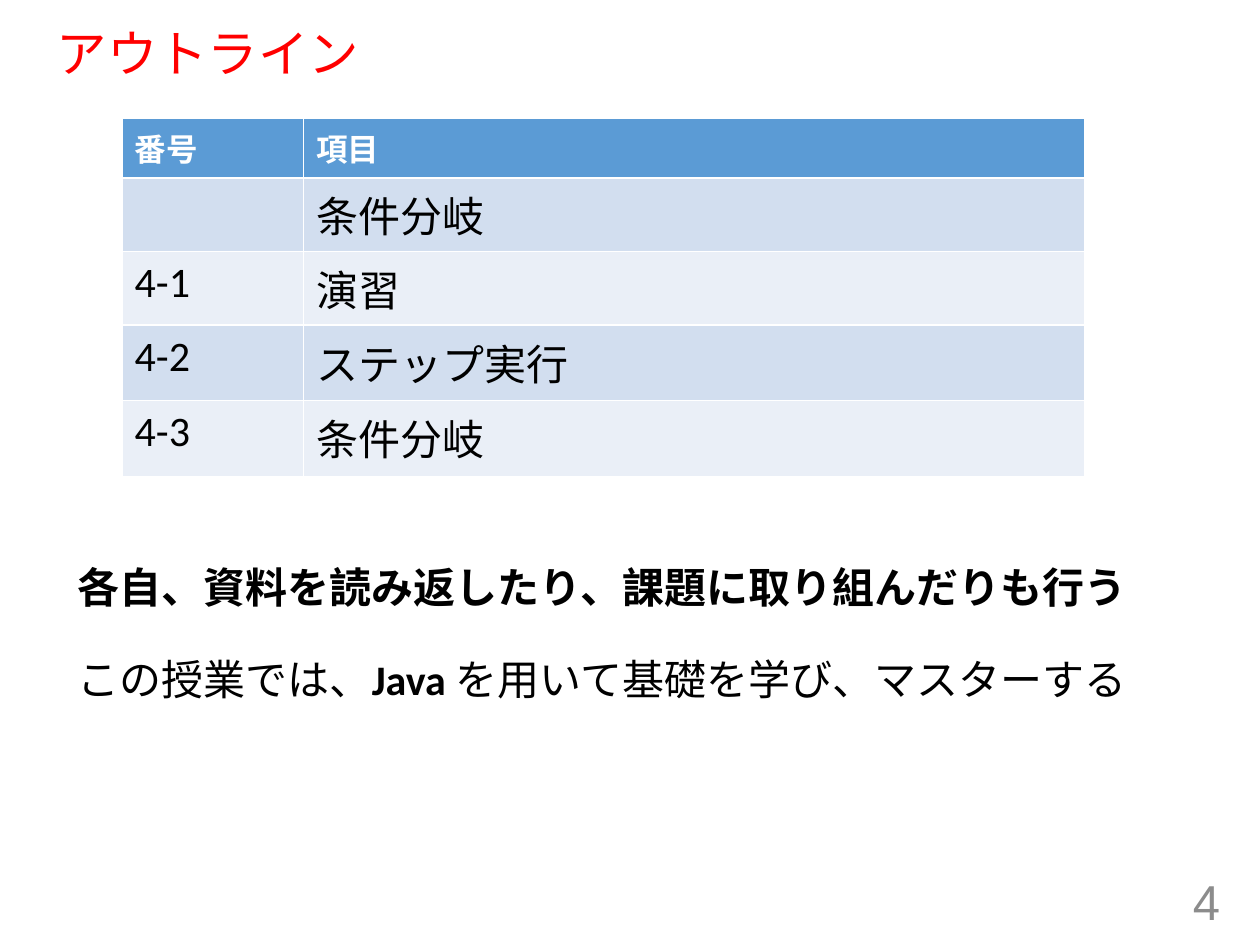
"""Build the outline slide: a table of topics and two remarks on the course."""
import pptx
import pptx.util
import pptx.dml.color
import pptx.enum.text

Pt = pptx.util.Pt
Align = pptx.enum.text.PP_ALIGN
Anchor = pptx.enum.text.MSO_ANCHOR
Fit = pptx.enum.text.MSO_AUTO_SIZE


def paint(code):
    """Turn a hex string into a colour."""
    return pptx.dml.color.RGBColor.from_string(code)


def style(para, size, color, face="Calibri", bold=False):
    """Set the font of a whole paragraph."""
    font = para.font
    font.size, font.name, font.bold = Pt(size), face, bold
    font.color.rgb = paint(color)


deck = pptx.Presentation()
deck.slide_width, deck.slide_height = Pt(720), Pt(540)
slide = deck.slides.add_slide(deck.slide_layouts[5])

title = slide.shapes.title
title.left, title.top, title.width, title.height = Pt(25.2), Pt(13.7), Pt(666), Pt(36.7)
frame = title.text_frame
frame.text = "アウトライン"
frame.auto_size = Fit.NONE
frame.vertical_anchor = Anchor.MIDDLE
para = frame.paragraphs[0]
para.alignment = Align.LEFT
para.line_spacing = 0.9
style(para, 28.8, "FF0000", "Arial")

rows = [
    ("番号", "項目"),
    ("", "条件分岐"),
    ("4-1", "演習"),
    ("4-2", "ステップ実行"),
    ("4-3", "条件分岐"),
]
highs = [34, 34, 34, 43.2, 43.2]
table = slide.shapes.add_table(
    len(rows), 2, Pt(69.8), Pt(67.7), Pt(550), Pt(sum(highs))
).table
for column, width in zip(table.columns, [103.7, 446.3]):
    column.width = Pt(width)
for i, (row, high) in enumerate(zip(rows, highs)):
    table.rows[i].height = Pt(high)
    head = i == 0
    fill = "5B9BD5" if head else ("EAEFF7", "D2DEEF")[i % 2]
    for j, text in enumerate(row):
        cell = table.cell(i, j)
        cell.fill.solid()
        cell.fill.fore_color.rgb = paint(fill)
        cell.text = text
        style(cell.text_frame.paragraphs[0], 18 if head else 24,
              "FFFFFF" if head else "000000", bold=head)

notes = [
    (317.5, [("各自、資料を読み返したり、課題に取り組んだりも行う", True)]),
    (370, [("この授業では、", False), ("Java ", True),
           ("を用いて基礎を学び、マスターする", False)]),
]
for top, parts in notes:
    frame = slide.shapes.add_textbox(Pt(37.4), Pt(top), Pt(620), Pt(36)).text_frame
    frame.word_wrap = True
    para = frame.paragraphs[0]
    style(para, 24, "000000")
    for text, bold in parts:
        run = para.add_run()
        run.text = text
        run.font.bold = bold

frame = slide.shapes.add_textbox(Pt(542.2), Pt(500.4), Pt(162), Pt(28.8)).text_frame
frame.word_wrap = True
frame.vertical_anchor = Anchor.MIDDLE
para = frame.paragraphs[0]
para.text = "4"
para.alignment = Align.RIGHT
style(para, 28, "8C8C8C", "Arial")

deck.save("out.pptx")
